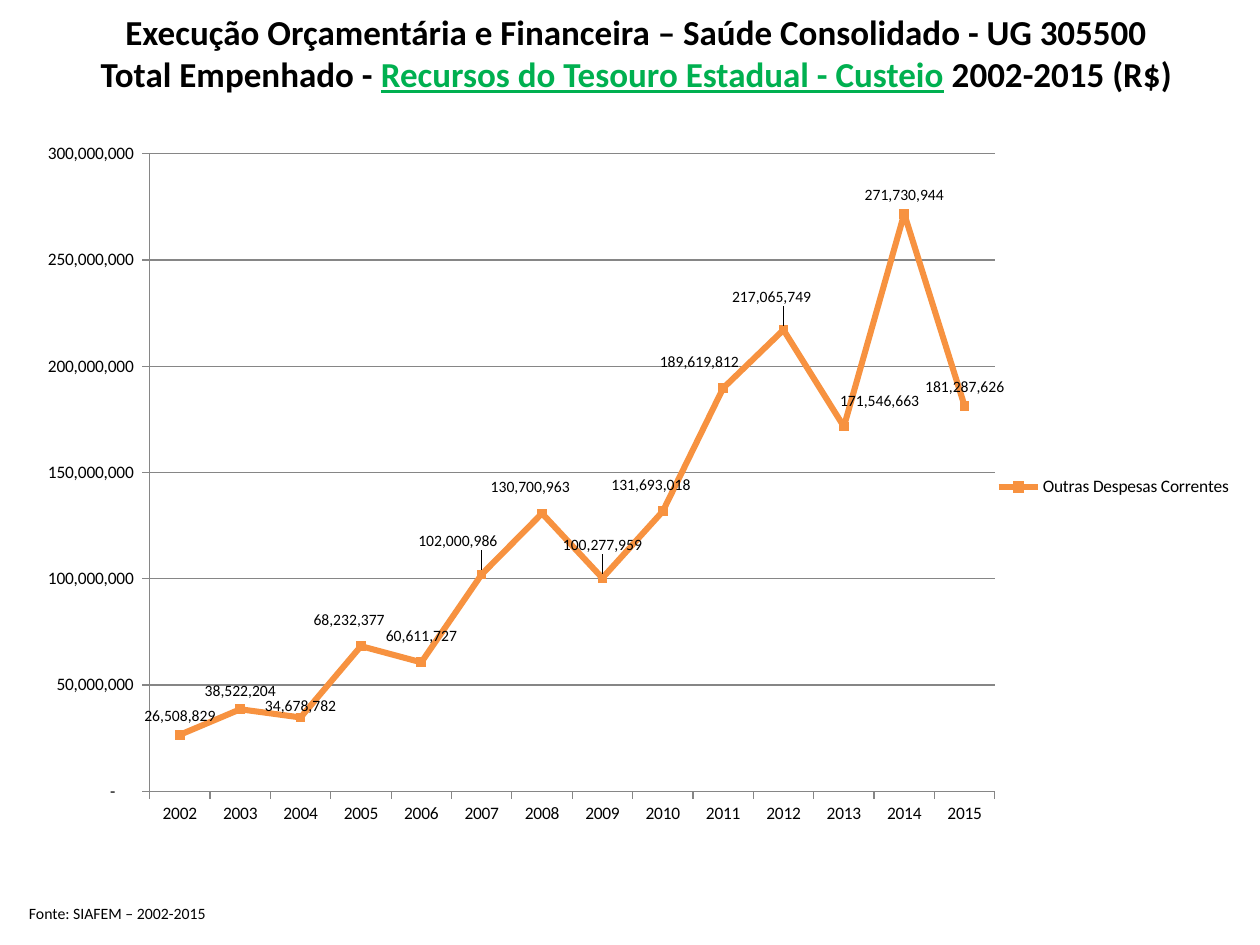
from lxml import etree
from pptx import Presentation
from pptx.chart.data import CategoryChartData
from pptx.dml.color import RGBColor
from pptx.enum.chart import (XL_CHART_TYPE, XL_LABEL_POSITION as LabelPos,
                             XL_LEGEND_POSITION, XL_MARKER_STYLE, XL_TICK_MARK)
from pptx.enum.text import MSO_ANCHOR, PP_ALIGN
from pptx.oxml.ns import qn
from pptx.util import Inches, Pt

COLORS = {"text": "000000", "highlight": "00B050", "line": "F79240", "grid": "868686"}
FONT = "Calibri"
NUMBER_FORMAT = r'_(* #,##0_);_(* \(#,##0\);_(* "-"??_);_('


def style(font, size, color="text", bold=False):
    font.name, font.size, font.bold = FONT, Pt(size), bold
    font.color.rgb = RGBColor.from_string(COLORS[color])


def manual_layout(**settings):
    layout = etree.Element(qn("c:layout"))
    manual = etree.SubElement(layout, qn("c:manualLayout"))
    for tag, value in settings.items():
        etree.SubElement(manual, qn("c:" + tag)).set("val", str(value))
    return layout


prs = Presentation()
prs.slide_width, prs.slide_height = Inches(10), Inches(7.5)
slide = prs.slides.add_slide(prs.slide_layouts[5])

# Title
title = slide.shapes.title
title.left, title.top = Inches(0.55), Inches(0)
title.width, title.height = Inches(9), Inches(0.84)
title.text_frame.vertical_anchor = MSO_ANCHOR.MIDDLE
heading = title.text_frame.paragraphs[0]
heading.alignment = PP_ALIGN.CENTER
style(heading.font, 20, bold=True)
heading.add_run().text = "Execução Orçamentária e Financeira – Saúde Consolidado - UG 305500"
heading.add_line_break()
heading.add_run().text = "Total Empenhado - "
resource = heading.add_run()
resource.text = "Recursos do Tesouro Estadual - Custeio"
resource.font.underline = True
resource.font.color.rgb = RGBColor.from_string(COLORS["highlight"])
heading.add_run().text = " 2002-2015 (R$)"

# Spending chart
spending = CategoryChartData(number_format=NUMBER_FORMAT)
spending.categories = [str(year) for year in range(2002, 2016)]
spending.add_series("Outras Despesas Correntes", [
    26508829, 38522204, 34678782, 68232377, 60611727, 102000986, 130700963,
    100277959, 131693018, 189619812, 217065749, 171546663, 271730944, 181287626])
chart = slide.shapes.add_chart(
    XL_CHART_TYPE.LINE_MARKERS, Inches(0.35), Inches(0.99),
    Inches(9.53), Inches(5.75), spending).chart
style(chart.font, 10)
chart.has_title = False
chart.has_legend = True
chart.legend.position = XL_LEGEND_POSITION.RIGHT
chart.legend.include_in_layout = False

plot_area = chart.plots[0]._element.getparent()
for old_layout in plot_area.findall(qn("c:layout")):
    plot_area.remove(old_layout)
plot_area.insert(0, manual_layout(layoutTarget="inner", xMode="edge", yMode="edge",
                                  x=0.08, y=0.04, w=0.71, h=0.88))

# Axes
amounts = chart.value_axis
amounts.minimum_scale, amounts.maximum_scale = 0, 300_000_000
amounts.major_unit = 50_000_000
amounts.has_major_gridlines = True
amounts.tick_labels.number_format = NUMBER_FORMAT
amounts.tick_labels.number_format_is_linked = False
for axis in (chart.category_axis, amounts):
    axis.major_tick_mark = XL_TICK_MARK.OUTSIDE
    style(axis.tick_labels.font, 10)
for rule in (chart.category_axis.format.line, amounts.format.line,
             amounts.major_gridlines.format.line):
    rule.width = Pt(0.75)
    rule.color.rgb = RGBColor.from_string(COLORS["grid"])

# Spending line
line_color = RGBColor.from_string(COLORS["line"])
expenses = chart.plots[0].series[0]
chart.plots[0].vary_by_categories = False
expenses.smooth = False
expenses.format.line.width = Pt(3.5)
expenses.format.line.color.rgb = line_color
expenses.marker.style = XL_MARKER_STYLE.SQUARE
expenses.marker.size = 5
expenses.marker.format.fill.solid()
expenses.marker.format.fill.fore_color.rgb = line_color
expenses.marker.format.line.color.rgb = line_color

# Value labels, with the crowded ones shifted by a share of the chart size
values = expenses.data_labels
values.show_value = True
values.position = LabelPos.ABOVE
values.number_format, values.number_format_is_linked = "#,##0", False
style(values.font, 9)
label_shifts = {
    2004: (0, 0.01), 2005: (-0.01, -0.01), 2006: (0, -0.01), 2007: (-0.02, -0.02),
    2008: (-0.01, -0.01), 2009: (0, -0.02), 2010: (-0.01, -0.01),
    2011: (-0.02, -0.01), 2012: (-0.01, -0.02), 2013: (0.03, -0.01)}
for year, (dx, dy) in label_shifts.items():
    index = year - 2002
    label = expenses.points[index].data_label
    style(label.font, 9)
    label.position = LabelPos.ABOVE
    for element in values._element.findall(qn("c:dLbl")):
        if element.find(qn("c:idx")).get("val") == str(index):
            element.insert(1, manual_layout(x=dx, y=dy))

# Source note
source = slide.shapes.add_textbox(Inches(0.08), Inches(7.12), Inches(3.19), Inches(0.25)).text_frame
source.word_wrap = True
source.margin_left = Inches(0.15)
source.text = "Fonte: SIAFEM – 2002-2015"
style(source.paragraphs[0].font, 9)

prs.save("out.pptx")
